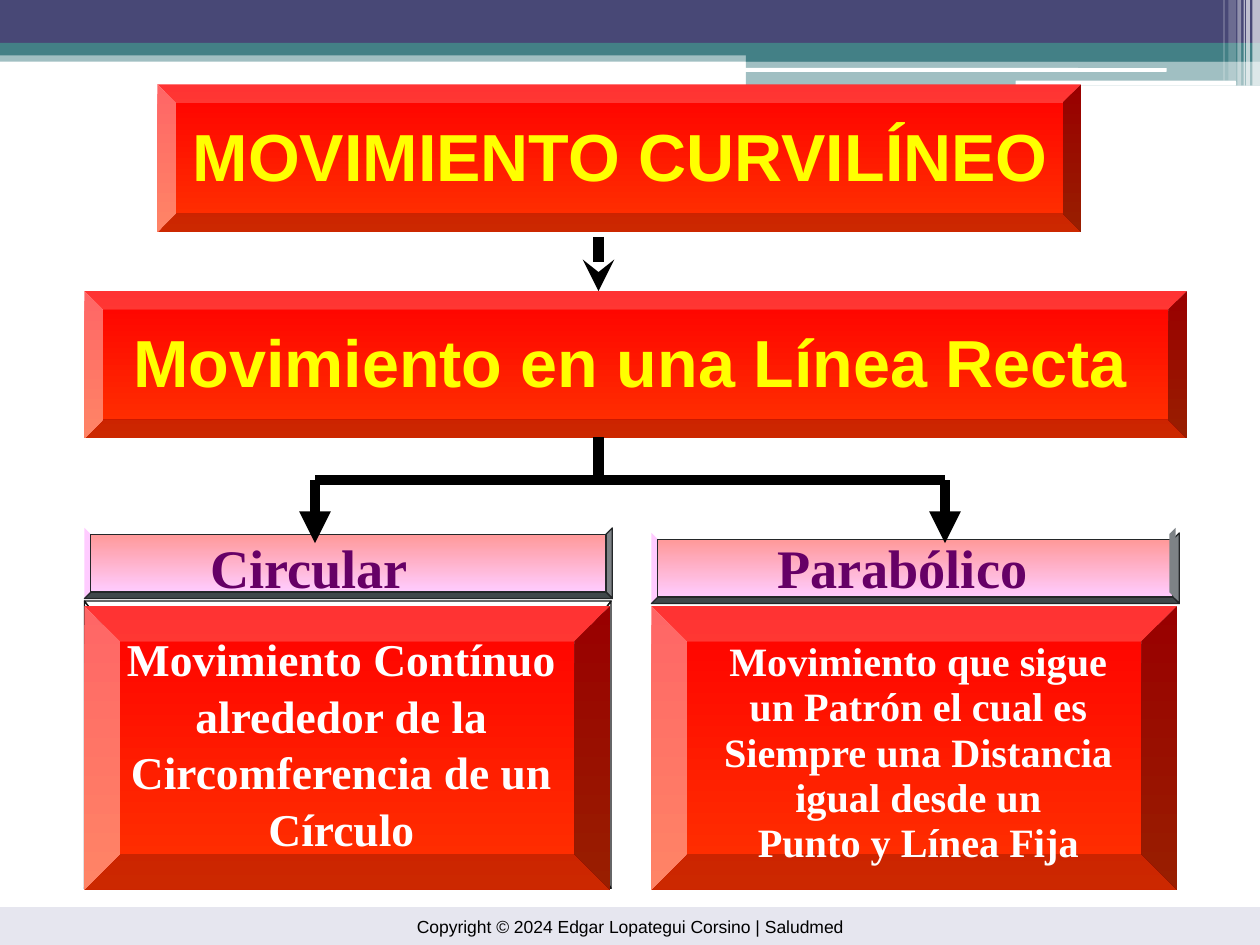
from lxml import etree
from pptx import Presentation
from pptx.dml.color import RGBColor
from pptx.enum.shapes import MSO_CONNECTOR, MSO_SHAPE
from pptx.enum.text import MSO_ANCHOR, MSO_AUTO_SIZE, PP_ALIGN
from pptx.oxml.ns import qn
from pptx.util import Inches, Pt

COLORS = {
    "indigo": "484876", "teal": "438086", "white": "FFFFFF", "black": "000000",
    "footer": "E6E6EF", "red": "FF0000", "orange": "FF3300", "yellow": "FFFF00",
    "salmon": "FF9999", "pink": "FFCCFF", "purple": "660066", "grey": "7D8286",
    "dark": "40484B", "outline": "242729", "frame": "131516",
}
SERIF = "Times New Roman"
LEFT_X, RIGHT_X = 0.67, 5.17

# left, top, width, height, colour, opacity in percent
BANDS = [
    (0, 0.4, 10, 0.09, "teal", 50),
    (0, 0, 10, 0.34, "indigo", 100),
    (0, 0.34, 10, 0.1, "teal", 100),
    (5.92, 0.39, 4.08, 0.1, "teal", 100),
    (5.92, 0.48, 4.08, 0.2, "teal", 50),
]
PILLS = [(5.91, 0.54, 3.35, 0.03), (8.06, 0.64, 1.75, 0.04)]
STRIPES = [
    (9.94, 0, 0.06, 0.68, "white", 65),
    (9.89, 0, 0.03, 0.68, "white", 65),
    (9.87, 0, 0.01, 0.68, "white", 60),
    (9.82, 0, 0.03, 0.68, "white", 40),
    (9.75, 0, 0.06, 0.64, "white", 20),
    (9.71, 0, 0.01, 0.64, "white", 30),
]


def rgb(name):
    return RGBColor.from_string(COLORS[name])


def paint(sp, fill=None, line=None, alpha=100):
    """Fill with one colour, a pair for a vertical gradient, or nothing."""
    sp.shadow.inherit = False
    if fill is None:
        sp.fill.background()
    elif isinstance(fill, tuple):
        sp.fill.gradient()
        sp.fill.gradient_angle = 270
        for stop, name, pos in zip(sp.fill.gradient_stops, fill, (0, 1)):
            stop.color.rgb = rgb(name)
            stop.position = pos
    else:
        sp.fill.solid()
        sp.fill.fore_color.rgb = rgb(fill)
        if alpha < 100:
            clr = sp._element.spPr.find(".//" + qn("a:srgbClr"))
            etree.SubElement(clr, qn("a:alpha")).set("val", str(alpha * 1000))
    if line:
        sp.line.color.rgb = rgb(line)
        sp.line.width = Pt(0)
    else:
        sp.line.fill.background()


def add_box(s, x, y, w, h, fill=None, alpha=100, line=None, kind=MSO_SHAPE.RECTANGLE):
    sp = s.shapes.add_shape(kind, Inches(x), Inches(y), Inches(w), Inches(h))
    paint(sp, fill, line, alpha)
    return sp


def add_bevel(s, x, y, w, h):
    add_box(s, x, y, w, h, ("red", "orange"), kind=MSO_SHAPE.BEVEL)


def add_polygon(s, points, fill=None, line=None):
    pts = [(Inches(x), Inches(y)) for x, y in points]
    fb = s.shapes.build_freeform(*pts[0])
    fb.add_line_segments(pts[1:], close=True)
    paint(fb.convert_to_shape(), fill, line)


def bevel_sides(x, y, w, h, dx, dy):
    """Return the left, right, top and bottom faces of a bevelled box."""
    outer = [(x, y), (x + w, y), (x + w, y + h), (x, y + h)]
    inner = [(x + dx, y + dy), (x + w - dx, y + dy),
             (x + w - dx, y + h - dy), (x + dx, y + h - dy)]
    return [[outer[a], inner[a], inner[b], outer[b]]
            for a, b in ((0, 3), (1, 2), (0, 1), (3, 2))]


def add_label(s, x, y):
    w, h, d = 4.19, 0.56, 0.05
    left, right, _, bottom = bevel_sides(x, y, w, h, d, d)
    add_polygon(s, left, "pink")
    add_polygon(s, right, "grey", "outline")
    add_polygon(s, bottom, "dark", "outline")
    add_box(s, x + d, y + d, w - 2 * d, h - 2 * d, ("salmon", "pink"), line="outline")


def write(sp, text, size, color, font="Arial", bold=True, align=PP_ALIGN.CENTER,
          anchor=MSO_ANCHOR.TOP, inset=(0, 0), wrap=True, spacing=1.04):
    tf = sp.text_frame
    tf.word_wrap = wrap
    tf.auto_size = MSO_AUTO_SIZE.NONE
    tf.vertical_anchor = anchor
    tf.margin_left = tf.margin_right = Inches(inset[0])
    tf.margin_top = tf.margin_bottom = Inches(inset[1])
    tf.text = text
    for p in tf.paragraphs:
        p.alignment = align
        p.line_spacing = spacing
        p.font.size = Pt(size)
        p.font.name = font
        p.font.bold = bold
        p.font.color.rgb = rgb(color)


def add_text(s, x, y, w, h, text, size, color, **fmt):
    sp = s.shapes.add_textbox(Inches(x), Inches(y), Inches(w), Inches(h))
    write(sp, text, size, color, **fmt)


def add_title(s, x, y, w, h, text, size, color, **fmt):
    """Place the title and bring it in front of what is drawn so far."""
    sp = s.shapes.title
    sp.left, sp.top, sp.width, sp.height = map(Inches, (x, y, w, h))
    write(sp, text, size, color, **fmt)
    s.shapes._spTree.append(sp._element)


def add_line(s, x1, y1, x2, y2, head=None):
    c = s.shapes.add_connector(MSO_CONNECTOR.STRAIGHT, *map(Inches, (x1, y1, x2, y2)))
    c.line.color.rgb = rgb("black")
    c.line.width = Pt(6)
    if head:
        etree.SubElement(c.line._get_or_add_ln(), qn("a:tailEnd")).set("type", head)
    etree.SubElement(c._element.spPr, qn("a:effectLst"))


def add_decoration(s):
    for band in BANDS:
        add_box(s, *band)
    for pill in PILLS:
        add_box(s, *pill, "white", kind=MSO_SHAPE.ROUNDED_RECTANGLE)
    for stripe in STRIPES:
        add_box(s, *stripe)
    footer = add_box(s, 0, 7.2, 10, 0.3, "footer")
    write(footer, "Copyright © 2024 Edgar Lopategui Corsino | Saludmed", 10, "black",
          bold=False, anchor=MSO_ANCHOR.MIDDLE, spacing=1)


def add_headings(s):
    add_bevel(s, 1.25, 0.67, 7.33, 1.17)
    add_title(s, 1.34, 0.84, 7.17, 0.73, "MOVIMIENTO CURVILÍNEO", 38, "yellow",
              inset=(0.1, 0.05))
    add_line(s, 4.75, 1.88, 4.75, 2.31, "stealth")
    add_bevel(s, LEFT_X, 2.31, 8.75, 1.17)
    add_text(s, 0.92, 2.47, 8.17, 0.73, "Movimiento en una Línea Recta", 38, "yellow",
             inset=(0.1, 0.05))


def add_branches(s):
    add_line(s, 4.75, 3.47, 4.75, 3.81)
    add_line(s, 2.5, 3.81, 7.5, 3.81)
    for x in (2.5, 7.5):
        add_line(s, x, 3.81, x, 4.31, "triangle")


def add_types(s):
    add_label(s, RIGHT_X, 4.23)
    for side in bevel_sides(LEFT_X, 4.77, 4.18, 2.28, 0.15, 0.2):
        add_polygon(s, side, line="frame")
    add_label(s, LEFT_X, 4.19)
    add_polygon(s, bevel_sides(5.14, 4.19, 4.19, 0.56, 0.05, 0.05)[1], "grey")
    for x, w, name in ((1.67, 1.58, "Circular"), (6.17, 1.98, "Parabólico")):
        add_text(s, x, 4.22, w, 0.52, name, 31, "purple", font=SERIF,
                 align=PP_ALIGN.LEFT, wrap=False)
    for x in (LEFT_X, RIGHT_X):
        add_bevel(s, x, 4.81, 4.17, 2.25)
    add_text(s, 0.75, 4.99, 3.92, 1.74,
             "Movimiento Contínuo\nalrededor de la Circomferencia de un Círculo",
             26, "white", font=SERIF)
    add_text(s, 5.25, 5.08, 4.08, 1.73,
             "Movimiento que sigue\nun Patrón el cual es\nSiempre una Distancia\n"
             "igual desde un\nPunto y Línea Fija",
             23, "white", font=SERIF, spacing=0.94)


def main():
    prs = Presentation()
    prs.slide_width, prs.slide_height = Inches(10), Inches(7.5)
    s = prs.slides.add_slide(prs.slide_layouts[5])
    add_decoration(s)
    add_types(s)
    add_headings(s)
    add_branches(s)
    prs.save("out.pptx")


if __name__ == "__main__":
    main()
